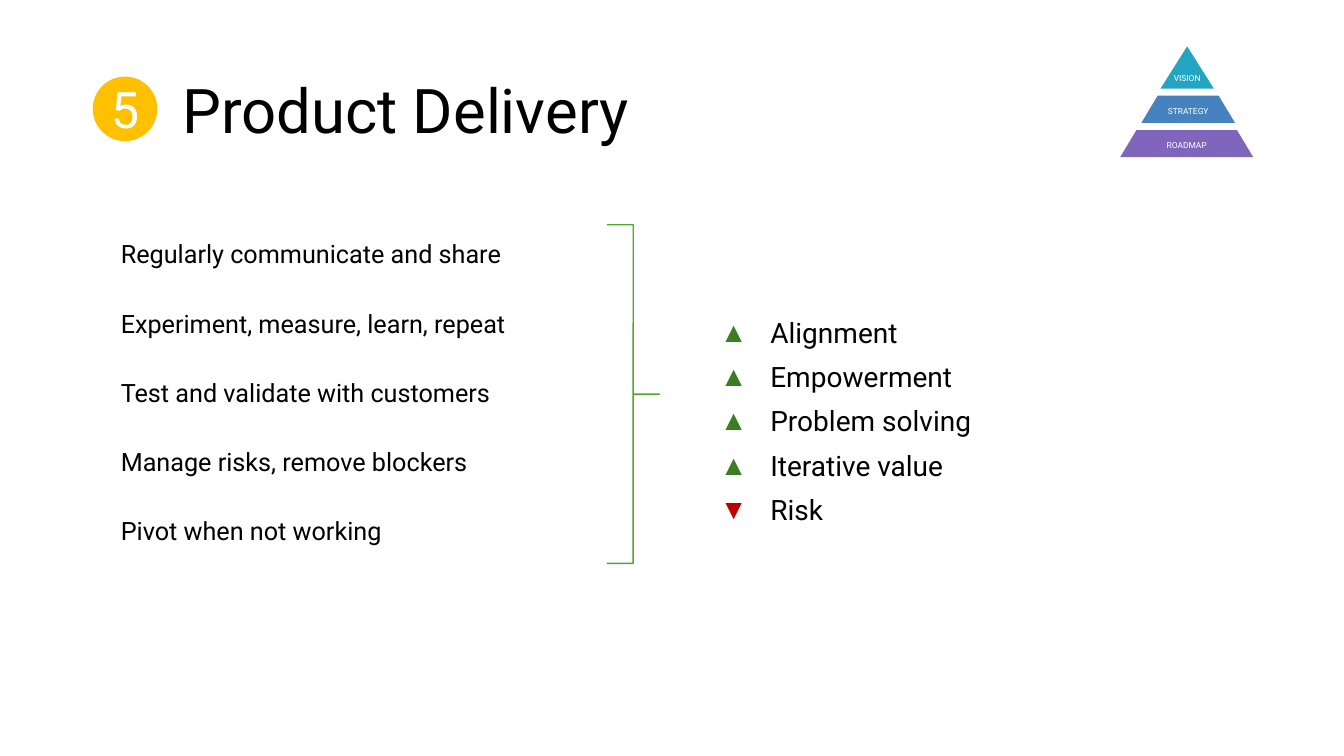
from lxml import etree
from pptx import Presentation
from pptx import util as u
from pptx.dml.color import RGBColor
from pptx.enum import shapes, text
from pptx.oxml import ns

BLACK = RGBColor(0x00, 0x00, 0x00)
WHITE = RGBColor(0xFF, 0xFF, 0xFF)
AMBER = RGBColor(0xFF, 0xC0, 0x00)
TEAL = RGBColor(0x23, 0xA5, 0xC1)
BLUE = RGBColor(0x46, 0x82, 0xBE)
PURPLE = RGBColor(0x7F, 0x65, 0xBB)
BRACE_GREEN = RGBColor(0x4E, 0xA7, 0x2E)
UP_GREEN = RGBColor(0x3B, 0x7D, 0x23)
DOWN_RED = RGBColor(0xC0, 0x00, 0x00)

PRACTICES = [
    "Regularly communicate and share",
    "Experiment, measure, learn, repeat",
    "Test and validate with customers",
    "Manage risks, remove blockers",
    "Pivot when not working",
]
OUTCOMES = [
    ("Alignment", "▲", UP_GREEN),
    ("Empowerment", "▲", UP_GREEN),
    ("Problem solving", "▲", UP_GREEN),
    ("Iterative value", "▲", UP_GREEN),
    ("Risk", "▼", DOWN_RED),
]


class SlideBuilder:
    font = "Roboto"
    line_spacing = 0.9

    def __init__(self, slide):
        self.slide = slide

    def add_run(self, paragraph, words, size, color):
        run = paragraph.add_run()
        run.text = words
        run.font.name = self.font
        run.font.size = u.Pt(size)
        run.font.color.rgb = color

    def prepare_frame(self, frame):
        frame.word_wrap = True
        frame.auto_size = text.MSO_AUTO_SIZE.NONE
        frame.vertical_anchor = text.MSO_ANCHOR.MIDDLE

    def place(self, shape, box):
        shape.left, shape.top, shape.width, shape.height = map(u.Inches, box)

    def add_lines(self, frame, lines, size, space_before):
        """Add one left-aligned paragraph per line and return them."""
        self.prepare_frame(frame)
        for index, line in enumerate(lines):
            paragraph = frame.add_paragraph() if index else frame.paragraphs[0]
            paragraph.alignment = text.PP_ALIGN.LEFT
            paragraph.line_spacing = self.line_spacing
            paragraph.space_before = u.Pt(space_before if index else 5)
            self.add_run(paragraph, line, size, BLACK)
        return frame.paragraphs

    def add_title(self, words, box):
        title = self.slide.shapes.title
        self.place(title, box)
        self.add_lines(title.text_frame, [words], 44, 0)

    def add_text_list(self, lines, box):
        shape = self.slide.shapes.add_textbox(*map(u.Inches, box))
        self.add_lines(shape.text_frame, lines, 18, 30)

    def add_bullet_list(self, items, box):
        body = self.slide.placeholders[1]
        self.place(body, box)
        lines = [words for words, _, _ in items]
        paragraphs = self.add_lines(body.text_frame, lines, 20, 10)
        for paragraph, (_, symbol, color) in zip(paragraphs, items):
            properties = paragraph._p.get_or_add_pPr()
            properties.set("marL", str(u.Inches(0.52)))
            properties.set("indent", str(u.Inches(-0.5)))
            bullet_color = etree.SubElement(properties, ns.qn("a:buClr"))
            etree.SubElement(bullet_color, ns.qn("a:srgbClr"), val=str(color))
            etree.SubElement(properties, ns.qn("a:buFont"), typeface="Arial")
            etree.SubElement(properties, ns.qn("a:buChar"), char=symbol)

    def add_label(self, parent, kind, box, fill, words, size):
        """Add a filled shape with a centred white label."""
        shape = parent.add_shape(kind, *map(u.Inches, box))
        shape.shadow.inherit = False
        shape.fill.solid()
        shape.fill.fore_color.rgb = fill
        shape.line.fill.background()
        frame = shape.text_frame
        self.prepare_frame(frame)
        frame.word_wrap = False
        frame.margin_left = frame.margin_right = 0
        frame.margin_top = frame.margin_bottom = 0
        frame.paragraphs[0].alignment = text.PP_ALIGN.CENTER
        self.add_run(frame.paragraphs[0], words, size, WHITE)
        return shape

    def add_brace(self, box):
        brace = self.slide.shapes.add_shape(
            shapes.MSO_SHAPE.RIGHT_BRACE, *map(u.Inches, box))
        brace.shadow.inherit = False
        brace.adjustments[0] = 0
        brace.adjustments[1] = 0.5
        brace.fill.background()
        brace.line.color.rgb = BRACE_GREEN
        brace.line.width = u.Pt(1)

    def add_pyramid(self):
        group = self.slide.shapes.add_group_shape().shapes
        self.add_label(group, shapes.MSO_SHAPE.ISOSCELES_TRIANGLE,
                       (11.51, 0.46, 0.53, 0.42), TEAL, "VISION", 6)
        layers = [
            ("STRATEGY", (11.32, 0.95, 0.93, 0.27), BLUE),
            ("ROADMAP", (11.11, 1.29, 1.32, 0.27), PURPLE),
        ]
        for words, box, fill in layers:
            layer = self.add_label(group, shapes.MSO_SHAPE.TRAPEZOID,
                                   box, fill, words, 6)
            layer.adjustments[0] = 0.6


def main():
    presentation = Presentation()
    presentation.slide_width = u.Inches(13.33)
    presentation.slide_height = u.Inches(7.5)
    slide = presentation.slides.add_slide(presentation.slide_layouts[1])
    builder = SlideBuilder(slide)

    # Heading with its number badge
    builder.add_title("Product Delivery", (1.71, 0.4, 10.71, 1.45))
    builder.add_label(slide.shapes, shapes.MSO_SHAPE.OVAL,
                      (0.92, 0.76, 0.64, 0.64), AMBER, "5", 36)

    # Product pyramid in the corner
    builder.add_pyramid()

    # Practices, braced together, lead to outcomes
    builder.add_brace((6.02, 2.23, 0.52, 3.36))
    builder.add_text_list(PRACTICES, (1.1, 2.23, 4.9, 3.36))
    builder.add_bullet_list(OUTCOMES, (7.02, 1.63, 5.79, 5.13))

    presentation.save("out.pptx")


if __name__ == "__main__":
    main()
